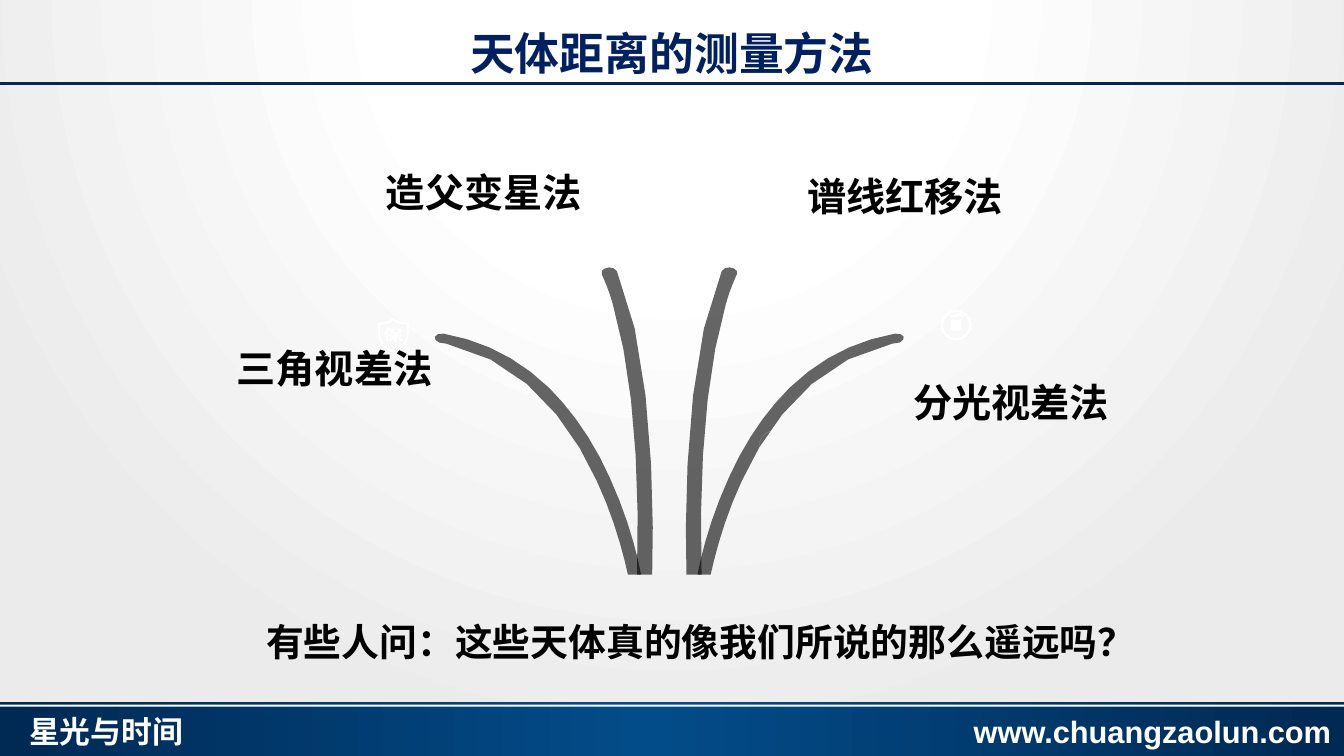
from lxml import etree
from math import cos, pi, sin
from pptx import Presentation
from pptx.dml.color import RGBColor
from pptx.enum.shapes import MSO_CONNECTOR, MSO_SHAPE
from pptx.enum.text import MSO_ANCHOR, PP_ALIGN
from pptx.oxml.ns import qn
from pptx.util import Pt

RECT, OVAL = MSO_SHAPE.RECTANGLE, MSO_SHAPE.OVAL
STRAIGHT = MSO_CONNECTOR.STRAIGHT
TOP, MIDDLE = MSO_ANCHOR.TOP, MSO_ANCHOR.MIDDLE
LEFT, CENTER = PP_ALIGN.LEFT, PP_ALIGN.CENTER
WIDE, HIGH = 960, 540
UNIT = 0.72
AXIS = 1328
HAN = "Noto Sans CJK SC"
COLORS = {"navy": "002953", "blue": "024C89", "title": "002060",
          "white": "FFFFFF", "gray": "EBEBEB", "black": "000000"}

TITLE = {"size": Pt(32), "name": HAN, "bold": True}
LABEL = {"size": Pt(28), "name": "Montserrat", "bold": True}
ASK = {"size": Pt(27), "name": HAN, "bold": True}
FOOT = {"size": Pt(22), "name": "Arial", "bold": True}

LABELS = [("三角视差法", 162, 242.6), ("分光视差法", 645.1, 266.4),
          ("造父变星法", 268.6, 116.6), ("谱线红移法", 569.5, 119.5)]
ORBITS = [(257, 215.3, 48.2, 23), (504.7, 127.4, 48.2, 71),
          (405.4, 122.4, 48.2, 71), (659.5, 208.1, 48.2, 23),
          (381.6, 311.8, 32.4, 18), (511.9, 260.6, 14.4, 46),
          (464.4, 230.4, 26.6, 39), (542.2, 307.4, 23, 26),
          (584.6, 211.7, 14.4, 23), (398.2, 240.5, 18, 48)]

OUTER = [(636, 570), (632, 548), (622, 511), (605, 474),
         (589, 438), (568, 408), (545, 385),
         (515, 356), (480, 338), (440, 331),
         (428, 330), (428, 341), (443, 341),
         (522, 358), (568, 424), (592, 477), (609, 513), (618, 548), (623, 570)]
INNER = [(647, 570), (649, 508), (648, 351), (612, 269),
         (608, 262), (594, 266), (597, 272),
         (601, 281), (605, 291), (608, 302),
         (628, 370), (635, 468), (632, 570)]
SHIELD = [(390, 315), (385, 320), (380, 320), (375, 320),
          (375, 340), (375, 344), (390, 350),
          (405, 344), (405, 340), (406, 320),
          (400, 320), (395, 320), (390, 315)]
RIM = [(390, 318), (386, 322), (380, 322), (377, 322),
       (377, 338), (377, 343), (390, 348),
       (404, 342), (404, 338), (404, 322),
       (400, 322), (394, 322), (390, 318)]
PERSON = [(387, 326), (384, 325), (381, 331), (383, 332),
          (383, 339), (385, 339), (385, 329)]
TREE = [(387, 331), (391, 331), (391, 332), (386, 332), (386, 334), (389, 334),
        (386, 338), (387, 339), (391, 335), (391, 339), (394, 339), (394, 334),
        (398, 339), (400, 337), (395, 334), (399, 334), (399, 332), (394, 332),
        (394, 331), (398, 331), (398, 326), (387, 326)]
MOUTH = [(390, 327), (395, 327), (395, 329), (390, 329)]
CART = [(752, 197), (750, 200), (723, 200), (722, 195), (714, 195),
        (714, 198), (720, 198), (725, 217), (748, 217), (753, 199)]
TAILS = [[(583, 205), (578, 215), (590, 222), (595, 213)],
         [(609, 205), (615, 215), (602, 222), (597, 213)]]
CORE = [(943, 328), (954, 328), (953, 323), (954, 317), (943, 317), (944, 323)]
ARC = [(943, 313), (948, 311), (954, 311), (957, 315), (952, 314), (943, 315)]


def rgb(key):
    return RGBColor.from_string(COLORS[key])


def fade(node, percent):
    clr = node.find(".//" + qn("a:srgbClr"))
    etree.SubElement(clr, qn("a:alpha"), val=str(percent * 1000))


def grade(node, stops, tag, attrs, rect=None):
    grad = node.find(".//" + qn("a:gradFill"))
    for child in list(grad):
        grad.remove(child)
    items = etree.SubElement(grad, qn("a:gsLst"))
    for pos, key, alpha in stops:
        stop = etree.SubElement(items, qn("a:gs"), pos=str(pos * 1000))
        etree.SubElement(stop, qn("a:srgbClr"), val=COLORS[key])
        if alpha < 100:
            fade(stop, alpha)
    shade = etree.SubElement(grad, qn(tag), attrs)
    if rect:
        etree.SubElement(shade, qn("a:fillToRect"), rect)


def curve(points, steps):
    out = [points[0]]
    for i in range(0, len(points) - 1, 3):
        ends = points[i:i + 4]
        for n in range(1, steps + 1):
            t = n / steps
            mix = ((1 - t) ** 3, 3 * t * (1 - t) ** 2, 3 * t * t * (1 - t), t ** 3)
            out.append(tuple(sum(m * p[k] for m, p in zip(mix, ends)) for k in (0, 1)))
    return out


def disc(x, y, r, steps=16):
    turns = [2 * pi * n / steps for n in range(steps)]
    return [(x + r * cos(a), y + r * sin(a)) for a in turns]


def draw(slide, loops, key, alpha=100):
    loops = [[(Pt(x * UNIT), Pt(y * UNIT)) for x, y in loop] for loop in loops]
    pen = slide.shapes.build_freeform(*loops[0][0])
    for n, loop in enumerate(loops):
        if n:
            pen.move_to(*loop[0])
        pen.add_line_segments(loop[1:], close=True)
    shape = pen.convert_to_shape()
    shape.shadow.inherit = False
    shape.fill.solid()
    shape.fill.fore_color.rgb = rgb(key)
    shape.line.fill.background()
    if alpha < 100:
        fade(shape.element.spPr, alpha)


def band(slide, y, h):
    shape = slide.shapes.add_shape(RECT, 0, Pt(y), Pt(WIDE), Pt(h))
    shape.shadow.inherit = False
    shape.line.fill.background()
    return shape


def orbit(slide, x, y, d, alpha):
    shape = slide.shapes.add_shape(OVAL, Pt(x), Pt(y), Pt(d), Pt(d))
    shape.shadow.inherit = False
    shape.fill.background()
    shape.line.color.rgb = rgb("white")
    shape.line.width = Pt(0.25)
    fade(shape.element.spPr, alpha)


def rule(slide, y):
    line = slide.shapes.add_connector(STRAIGHT, 0, Pt(y), Pt(WIDE), Pt(y))
    line.line.color.rgb = rgb("navy")
    line.line.width = Pt(1.75)
    etree.SubElement(line.element.spPr, qn("a:effectLst"))


def write(slide, text, at, font, key="black", pad=(7.2, 3.6), wrap=False,
          anchor=MIDDLE, align=LEFT, space=1.0):
    box = slide.shapes.add_textbox(*map(Pt, at))
    frame = box.text_frame
    side, edge = map(Pt, pad)
    look = {"word_wrap": wrap, "vertical_anchor": anchor, "margin_left": side,
            "margin_right": side, "margin_top": edge, "margin_bottom": edge}
    for name, value in look.items():
        setattr(frame, name, value)
    para = frame.paragraphs[0]
    para.alignment, para.line_spacing = align, space
    run = para.add_run()
    run.text = text
    for name, value in font.items():
        setattr(run.font, name, value)
    run.font.color.rgb = rgb(key)
    for props in box.element.iter(qn("a:rPr")):
        etree.SubElement(props, qn("a:ea"), typeface=HAN)


def main():
    deck = Presentation()
    deck.slide_width, deck.slide_height = Pt(WIDE), Pt(HIGH)
    slide = deck.slides.add_slide(deck.slide_layouts[6])
    slide.background.fill.gradient()
    grade(slide.element, [(0, "white", 66), (35, "white", 100), (100, "gray", 100)],
          "a:path", {"path": "circle"},
          {"l": "50000", "t": "-80000", "r": "50000", "b": "180000"})
    rule(slide, 59.8)
    foot = band(slide, 501.8, 38.2)
    foot.fill.gradient()
    grade(foot.element, [(0, "navy", 100), (48, "blue", 100), (100, "navy", 100)],
          "a:lin", {"ang": "0", "scaled": "0"})
    strip = band(slide, 503.3, 1.4)
    strip.fill.solid()
    strip.fill.fore_color.rgb = rgb("white")
    for text, x, w in [("www.chuangzaolun.com", 695.5, 256), ("星光与时间", 20.9, 283.7)]:
        write(slide, text, (x, 511.9, w, 28), FOOT, "white", (0, 0), anchor=TOP, space=0.9)
    write(slide, "天体距离的测量方法", (0, 14.4, WIDE, 46), TITLE, "title",
          wrap=True, align=CENTER)
    for stalk in (OUTER, INNER):
        draw(slide, [curve(stalk, 5)], "black", 60)
        draw(slide, [curve([(AXIS - x, y) for x, y in stalk], 5)], "black", 60)
    for spot in ORBITS:
        orbit(slide, *spot)
    icons = [[curve(SHIELD, 3), curve(RIM, 3), PERSON, TREE, MOUTH],
             [CART, disc(729.5, 223.5, 3.5, 8), disc(743, 223.5, 3.5, 8)],
             [*TAILS, disc(596, 199, 14), disc(596, 199, 12)],
             [disc(948.5, 322.5, 15.5), disc(948.5, 322.5, 13), ARC, CORE]]
    for icon in icons:
        draw(slide, icon, "white")
    for text, x, y in LABELS:
        write(slide, text, (x, y, 156.2, 41), LABEL)
    write(slide, "有些人问：这些天体真的像我们所说的那么遥远吗？",
          (180.7, 437, 655.2, 42.5), ASK, pad=(9.4, 5), wrap=True)
    deck.save("out.pptx")


if __name__ == "__main__":
    main()
